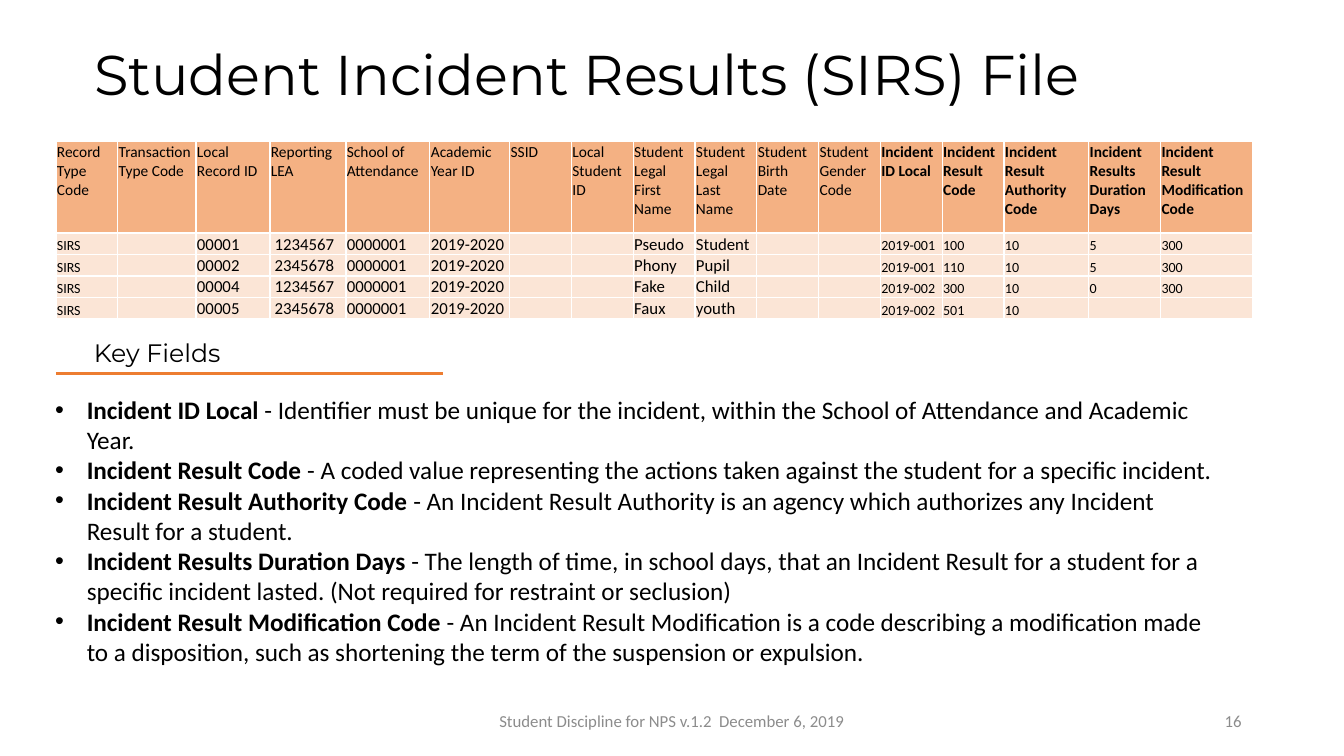
from lxml.etree import SubElement
from pptx import Presentation
from pptx.dml.color import RGBColor
from pptx.enum.shapes import MSO_CONNECTOR as Connector
from pptx.enum.text import MSO_ANCHOR as Anchor, PP_ALIGN as Align
from pptx.oxml.ns import qn
from pptx.util import Pt

BLACK, WHITE, GRAY, ORANGE = "000000", "FFFFFF", "8C8C8C", "ED7D31"
HEADER_FILL, RECORD_FILL = "F4B183", "FBE5D6"
COLUMNS = [
    ("Record Type Code", 44.15), ("Transaction Type Code", 55.9),
    ("Local Record ID", 52.8), ("Reporting LEA", 54.3),
    ("School of Attendance", 60), ("Academic Year ID", 57),
    ("SSID", 44.15), ("Local Student ID", 44.15),
    ("Student Legal First Name", 44.15), ("Student Legal Last Name", 44.15),
    ("Student Birth Date", 44.15), ("Student Gender Code", 44.15),
    ("Incident ID Local", 44.15), ("Incident Result Code", 44.15),
    ("Incident Result Authority Code", 60.6),
    ("Incident Results Duration Days", 51.3),
    ("Incident Result Modification Code", 65.4),
]
FIRST_INCIDENT_COLUMN = 12
RECORDS = [
    ("00001", " 1234567", "Pseudo", "Student", "2019-001", "100", "10", "5", "300"),
    ("00002", " 2345678", "Phony", "Pupil", "2019-001", "110", "10", "5", "300"),
    ("00004", " 1234567", "Fake", "Child", "2019-002", "300", "10", "0", "300"),
    ("00005", " 2345678", "Faux", "youth", "2019-002", "501", "10", "", ""),
]
KEY_FIELDS = [
    ("Incident ID Local", "Identifier must be unique for the incident, within the "
     "School of Attendance and Academic Year."),
    ("Incident Result Code", "A coded value representing the actions taken against "
     "the student for a specific incident."),
    ("Incident Result Authority Code", "An Incident Result Authority is an agency "
     "which authorizes any Incident Result for a student."),
    ("Incident Results Duration Days", "The length of time, in school days, that an "
     "Incident Result for a student for a specific incident lasted. "
     "(Not required for restraint or seclusion)"),
    ("Incident Result Modification Code", "An Incident Result Modification is a code "
     "describing a modification made to a disposition, such as shortening the term "
     "of the suspension or expulsion."),
]


def rgb(value):
    return RGBColor.from_string(value)


def apply(target, formats):
    for attribute, value in formats.items():
        setattr(target, attribute, value)


def add_text(paragraph, text, size, color=BLACK, font="Calibri", bold=False):
    run = paragraph.add_run()
    run.text = text
    apply(run.font, {"size": Pt(size), "name": font, "bold": bold})
    run.font.color.rgb = rgb(color)


def add_box(slide, left, top, width, height, anchor=Anchor.TOP):
    box = slide.shapes.add_textbox(Pt(left), Pt(top), Pt(width), Pt(height))
    apply(box.text_frame, {"word_wrap": True, "vertical_anchor": anchor})
    return box.text_frame


def place_title(slide, left, top, width, height):
    title = slide.shapes.title
    apply(title, {"left": Pt(left), "top": Pt(top),
                  "width": Pt(width), "height": Pt(height)})
    apply(title.text_frame, {"word_wrap": True, "vertical_anchor": Anchor.MIDDLE})
    heading = title.text_frame.paragraphs[0]
    apply(heading, {"alignment": Align.LEFT, "line_spacing": 0.9})
    add_text(heading, "Student Incident Results (SIRS) File", 40, font="Montserrat")


def fill_cell(cell, text, size, fill, bold, anchor):
    apply(cell, {"margin_left": Pt(0.7), "margin_right": Pt(0.7),
                 "margin_top": Pt(0.7), "margin_bottom": 0,
                 "vertical_anchor": anchor})
    properties = cell._tc.get_or_add_tcPr()
    for side in ("lnL", "lnR", "lnT", "lnB"):
        border = SubElement(properties, qn(f"a:{side}"), w=str(Pt(1)))
        SubElement(SubElement(border, qn("a:solidFill")), qn("a:srgbClr"), val=WHITE)
    cell.fill.solid()
    cell.fill.fore_color.rgb = rgb(fill)
    paragraph = cell.text_frame.paragraphs[0]
    if text:
        add_text(paragraph, text, size, bold=bold)
    else:
        SubElement(paragraph._p, qn("a:endParaRPr"), sz=str(size * 100))


def place_records(slide, left, top, width, header_height, record_height):
    height = header_height + record_height * len(RECORDS)
    table = slide.shapes.add_table(len(RECORDS) + 1, len(COLUMNS), Pt(left), Pt(top),
                                   Pt(width), Pt(height)).table
    apply(table, {"first_row": False, "horz_banding": False})
    total = sum(share for _, share in COLUMNS)
    table.rows[0].height = Pt(header_height)
    for index, (label, share) in enumerate(COLUMNS):
        table.columns[index].width = Pt(width * share / total)
        fill_cell(table.cell(0, index), label, 11, HEADER_FILL,
                  index >= FIRST_INCIDENT_COLUMN, Anchor.TOP)
    for row, (record_id, lea, first, last, *incident) in enumerate(RECORDS, 1):
        table.rows[row].height = Pt(record_height)
        values = ["SIRS", "", record_id, lea, "0000001", "2019-2020", "", "",
                  first, last, "", "", *incident]
        for index, value in enumerate(values):
            size = 12 if 0 < index < FIRST_INCIDENT_COLUMN and value else 10
            fill_cell(table.cell(row, index), value, size, RECORD_FILL,
                      False, Anchor.BOTTOM)


def place_section_heading(slide, left, top, width, height):
    heading = add_box(slide, left + 20, top, width, height)
    add_text(heading.paragraphs[0], "Key Fields", 18, font="Montserrat")
    rule_top = Pt(top + height)
    rule = slide.shapes.add_connector(Connector.STRAIGHT, Pt(left), rule_top,
                                      Pt(left + width), rule_top)
    rule.line.color.rgb = rgb(ORANGE)
    rule.line.width = Pt(2.25)
    SubElement(rule._element.spPr, qn("a:effectLst"))


def place_key_fields(slide, left, top, width, height):
    definitions = add_box(slide, left, top, width, height)
    for index, (field, meaning) in enumerate(KEY_FIELDS):
        item = definitions.add_paragraph() if index else definitions.paragraphs[0]
        properties = item._p.get_or_add_pPr()
        properties.set("marL", str(Pt(22.5)))
        properties.set("indent", str(-Pt(22.5)))
        SubElement(properties, qn("a:buFont"), typeface="Arial")
        SubElement(properties, qn("a:buChar"), char="•")
        add_text(item, f"{field} ", 18, bold=True)
        add_text(item, f"- {meaning}", 18)


def place_footer(slide, left, top, width, height):
    notice_width, number_width = 324, 216
    parts = [
        ("Student Discipline for NPS v.1.2  December 6, 2019", left,
         notice_width, Align.CENTER),
        ("16", left + width - number_width, number_width, Align.RIGHT),
    ]
    for text, part_left, part_width, alignment in parts:
        footer = add_box(slide, part_left, top, part_width, height, Anchor.MIDDLE)
        footer.paragraphs[0].alignment = alignment
        add_text(footer.paragraphs[0], text, 12, GRAY)


def main():
    deck = Presentation()
    apply(deck, {"slide_width": Pt(960), "slide_height": Pt(540)})
    slide = deck.slides.add_slide(deck.slide_layouts[5])
    place_title(slide, 60, 15, 828, 81)
    place_records(slide, 40, 101, 854.65, 65.5, 15)
    place_section_heading(slide, 40, 237.5, 276.5, 29)
    place_key_fields(slide, 32.4, 278, 847.5, 212)
    place_footer(slide, 318, 500.5, 576, 28.75)
    deck.save("out.pptx")


if __name__ == "__main__":
    main()
